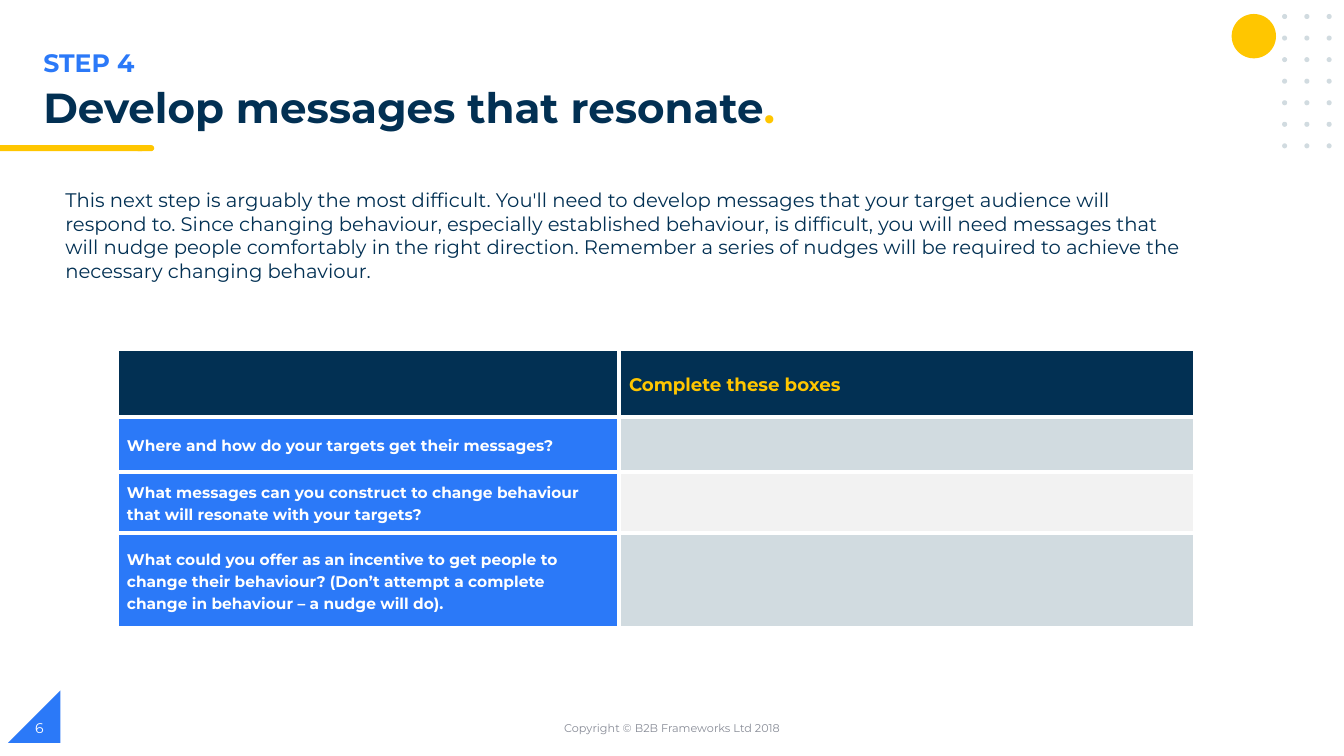
import pptx
import pptx.util
import pptx.dml.color
import pptx.enum.shapes
import pptx.enum.text
import pptx.oxml

Pt = pptx.util.Pt
RGB = pptx.dml.color.RGBColor
KIND = pptx.enum.shapes.MSO_SHAPE
ALIGN = pptx.enum.text.PP_ALIGN
ANCHOR = pptx.enum.text.MSO_ANCHOR

BLUE = RGB(0x2B, 0x79, 0xF8)
NAVY = RGB(0x02, 0x30, 0x53)
GOLD = RGB(0xFF, 0xC6, 0x00)
MIST = RGB(0xD1, 0xDB, 0xE0)
PALE = RGB(0xF2, 0xF2, 0xF2)
GREY = RGB(0x88, 0x8C, 0x97)
WHITE = RGB(0xFF, 0xFF, 0xFF)
FACE = "Montserrat"

deck = pptx.Presentation()
deck.slide_width, deck.slide_height = Pt(960), Pt(540)
slide = deck.slides.add_slide(deck.slide_layouts[6])


def add_solid(kind, left, top, width, height, color):
    shape = slide.shapes.add_shape(kind, Pt(left), Pt(top), Pt(width), Pt(height))
    shape.shadow.inherit = False
    shape.fill.solid()
    shape.fill.fore_color.rgb = color
    shape.line.fill.background()
    return shape


def style(para, size, color, bold=False):
    font = para.font
    font.name, font.size, font.bold = FACE, Pt(size), bold
    font.color.rgb = color


# Corner triangle, title rule and dot grid
corner = add_solid(KIND.RIGHT_TRIANGLE, 5.8, 493.2, 37.4, 37.4, BLUE)
corner.rotation = 270
add_solid(KIND.FLOWCHART_TERMINATOR, 96.5, 103.7, 13.7, 4.3, GOLD)
add_solid(KIND.RECTANGLE, 0, 103.7, 101.5, 4.3, GOLD)
add_solid(KIND.OVAL, 879.8, 10, 31.7, 31.7, GOLD)
for row in range(7):
    for col in range(3):
        add_solid(KIND.OVAL, 915.8 + 15.9 * col, 10 + 15.4 * row, 3.6, 3.6, MIST)

# Text
INTRO = (
    "This next step is arguably the most difficult. You'll need to develop messages "
    "that your target audience will respond to. Since changing behaviour, especially "
    "established behaviour, is difficult, you will need messages that will nudge "
    "people comfortably in the right direction. Remember a series of nudges will be "
    "required to achieve the necessary changing behaviour."
)
texts = [
    ("STEP 4", 23.8, 30.2, 481.7, 28.8, 18, BLUE, True, ANCHOR.TOP, ALIGN.LEFT, 1),
    ("Develop messages that resonate", 23.8, 59, 869.8, 40.3, 30, NAVY, True,
     ANCHOR.TOP, ALIGN.LEFT, 0.9),
    (INTRO, 39.6, 131, 814.3, 74.9, 14, NAVY, False, ANCHOR.TOP, ALIGN.LEFT, 1),
    ("Copyright © B2B Frameworks Ltd 2018", 318.2, 505.4, 324, 28.8, 8, GREY, False,
     ANCHOR.MIDDLE, ALIGN.CENTER, 1),
    ("6", 18, 505.4, 216, 28.8, 10, WHITE, False, ANCHOR.MIDDLE, ALIGN.LEFT, 1),
]
for words, left, top, width, height, size, color, bold, anchor, align, space in texts:
    box = slide.shapes.add_textbox(Pt(left), Pt(top), Pt(width), Pt(height))
    frame = box.text_frame
    frame.word_wrap = True
    frame.vertical_anchor = anchor
    para = frame.paragraphs[0]
    para.text = words
    para.alignment, para.line_spacing = align, space
    style(para, size, color, bold)
    if size == 30:
        stop = para.add_run()
        stop.text = "."
        stop.font.color.rgb = GOLD

# Worksheet table: text and fill of both columns, with the row height
rows = [
    ("", NAVY, "Complete these boxes", NAVY, 49),
    ("Where and how do your targets get their messages?", BLUE, "", MIST, 38.9),
    ("What messages can you construct to change behaviour that will resonate with "
     "your targets?", BLUE, "", PALE, 43.9),
    ("What could you offer as an incentive to get people to change their behaviour? "
     "(Don’t attempt a complete change in behaviour – a nudge will do).",
     BLUE, "", MIST, 67.7),
]
EDGE = (
    '<a:{} xmlns:a="http://schemas.openxmlformats.org/drawingml/2006/main" w="38100">'
    '<a:solidFill><a:srgbClr val="FFFFFF"/></a:solidFill></a:{}>'
)
table = slide.shapes.add_table(
    len(rows), 2, Pt(83.5), Pt(249.1), Pt(769.7), Pt(199.5)).table
table.columns[0].width, table.columns[1].width = Pt(358.6), Pt(411.1)
for r, (ask, left_fill, reply, right_fill, height) in enumerate(rows):
    table.rows[r].height = Pt(height)
    for c, (words, fill) in enumerate([(ask, left_fill), (reply, right_fill)]):
        cell = table.cell(r, c)
        cell.vertical_anchor = ANCHOR.MIDDLE
        cell.margin_left = cell.margin_right = Pt(7.2)
        cell.margin_top = cell.margin_bottom = 0
        props = cell._tc.get_or_add_tcPr()
        for side in ("lnL", "lnR", "lnT", "lnB"):
            props.append(pptx.oxml.parse_xml(EDGE.format(side, side)))
        cell.fill.solid()
        cell.fill.fore_color.rgb = fill
        para = cell.text_frame.paragraphs[0]
        para.text = words
        para.line_spacing = 1.15
        style(para, 11 if r else 13, WHITE if r else GOLD, True)

deck.save("out.pptx")
